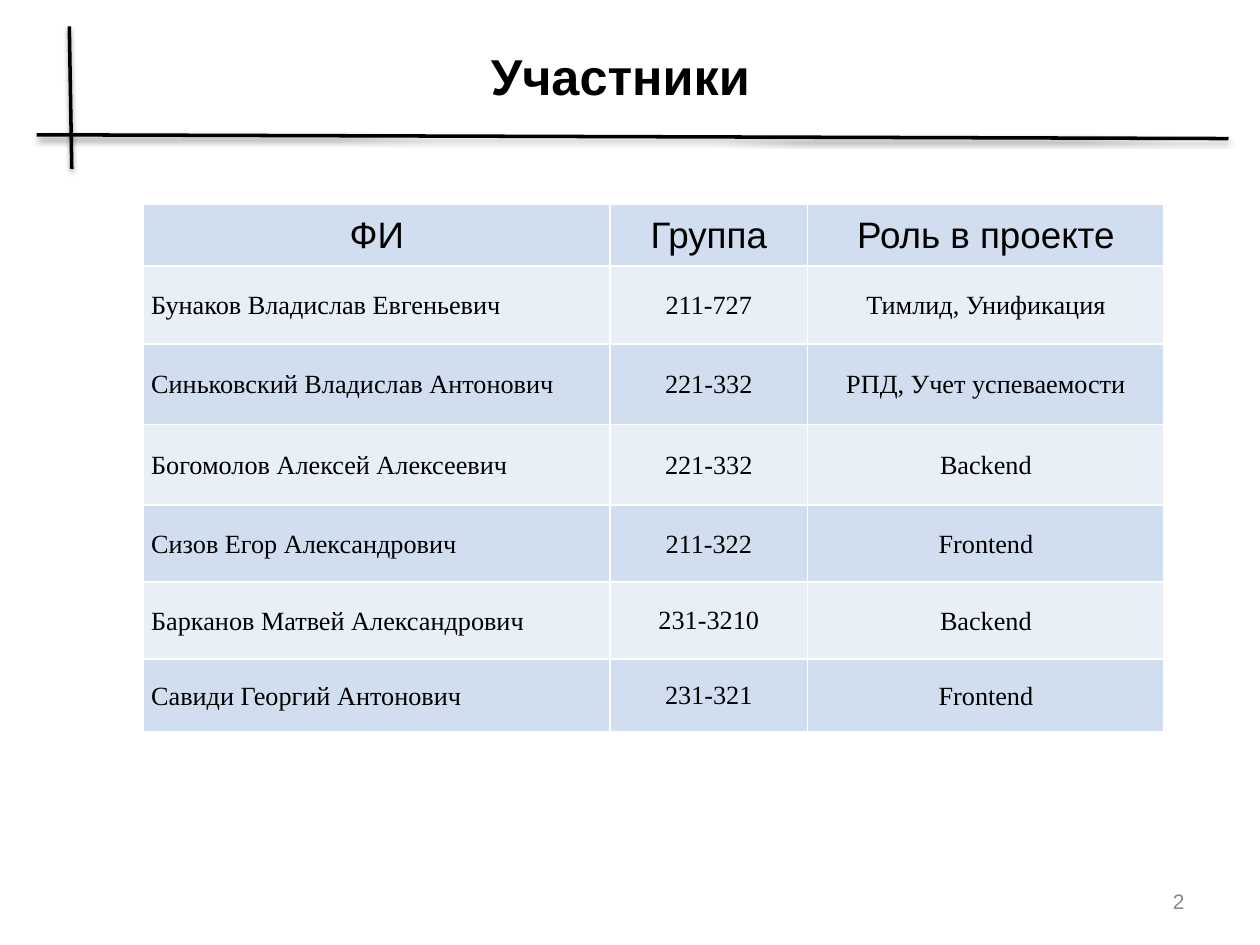
from dataclasses import dataclass

from lxml import etree
from pptx import Presentation
from pptx.dml.color import RGBColor
from pptx.enum.shapes import MSO_CONNECTOR
from pptx.enum.text import MSO_ANCHOR, PP_ALIGN
from pptx.oxml import parse_xml
from pptx.oxml.ns import nsdecls, qn
from pptx.util import Inches, Pt

LEFT, CENTER, RIGHT = PP_ALIGN.LEFT, PP_ALIGN.CENTER, PP_ALIGN.RIGHT
MIDDLE = MSO_ANCHOR.MIDDLE
STRAIGHT = MSO_CONNECTOR.STRAIGHT


@dataclass(frozen=True)
class Theme:
    ink: str = "000000"
    muted: str = "888888"
    border: str = "FFFFFF"
    bands: tuple = ("D0DEEF", "E9EFF7")
    heading_font: str = "Arial"
    body_font: str = "Times New Roman"
    title_size: float = 28.8
    header_size: float = 21
    body_size: float = 15
    number_size: float = 12
    rule_width: float = 2
    border_width: float = 1


THEME = Theme()

HEADER = ("ФИ", "Группа", "Роль в проекте")
MEMBERS = (
    ("Бунаков Владислав Евгеньевич", "211-727", "Тимлид, Унификация"),
    ("Синьковский Владислав Антонович", "221-332", "РПД, Учет успеваемости"),
    ("Богомолов Алексей Алексеевич", "221-332", "Backend"),
    ("Сизов Егор Александрович", "211-322", "Frontend"),
    ("Барканов Матвей Александрович", "231-3210", "Backend"),
    ("Савиди Георгий Антонович", "231-321", "Frontend"),
)
COLUMN_WIDTHS = (3.7, 1.57, 2.83)
ROW_HEIGHTS = (0.49, 0.62, 0.64, 0.64, 0.61, 0.61, 0.58)
TIGHT_ROWS = (5, 6)  # group numbers here have single line spacing


def write_text(frame, text, *, size, font=THEME.heading_font, color=THEME.ink,
               bold=False, align=LEFT, line_spacing=None):
    frame.word_wrap = True
    paragraph = frame.paragraphs[0]
    paragraph.alignment = align
    paragraph.line_spacing = line_spacing
    run = paragraph.add_run()
    run.text = text
    run.font.name = font
    run.font.size = Pt(size)
    run.font.bold = bold
    run.font.color.rgb = RGBColor.from_string(color)


def set_margins(target, left, top, right, bottom):
    target.margin_left, target.margin_top = Inches(left), Inches(top)
    target.margin_right, target.margin_bottom = Inches(right), Inches(bottom)


def add_label(slide, box, text, margins=(0.1, 0.05, 0.1, 0.05), **text_format):
    frame = slide.shapes.add_textbox(*map(Inches, box)).text_frame
    set_margins(frame, *margins)
    frame.vertical_anchor = MIDDLE
    write_text(frame, text, **text_format)


def add_crossed_rules(slide, box):
    left, top, width, height = box
    right, bottom = left + width, top + height
    rules = slide.shapes.add_group_shape()
    ends = (
        (left + 0.28, bottom, left + 0.26, top),
        (left, bottom - 0.27, right, bottom - 0.24),
    )
    for points in ends:
        rule = rules.shapes.add_connector(STRAIGHT, *map(Inches, points))
        rule.line.color.rgb = RGBColor.from_string(THEME.ink)
        rule.line.width = Pt(THEME.rule_width)
        # Soft shadow straight below the rule
        rule._element.spPr.append(parse_xml(
            f'<a:effectLst {nsdecls("a")}>'
            f'<a:outerShdw blurRad="{Pt(3.1)}" dist="{Pt(1.6)}" dir="5400000" '
            f'rotWithShape="0"><a:srgbClr val="{THEME.ink}">'
            '<a:alpha val="38000"/></a:srgbClr></a:outerShdw></a:effectLst>'))


def set_borders(cell):
    properties = cell._tc.get_or_add_tcPr()
    for position, side in enumerate(("lnL", "lnR", "lnT", "lnB")):
        line = etree.Element(qn(f"a:{side}"), w=str(Pt(THEME.border_width)))
        fill = etree.SubElement(line, qn("a:solidFill"))
        etree.SubElement(fill, qn("a:srgbClr"), val=THEME.border)
        properties.insert(position, line)


def add_member_table(slide, box):
    rows = (HEADER, *MEMBERS)
    table = slide.shapes.add_table(
        len(rows), len(HEADER), *map(Inches, box)).table
    for column, width in zip(table.columns, COLUMN_WIDTHS):
        column.width = Inches(width)
    for row, height in zip(table.rows, ROW_HEIGHTS):
        row.height = Inches(height)

    for r, values in enumerate(rows):
        is_header = r == 0
        for c, value in enumerate(values):
            tight = r in TIGHT_ROWS and c == 1
            cell = table.cell(r, c)
            cell.fill.solid()
            cell.fill.fore_color.rgb = RGBColor.from_string(THEME.bands[r % 2])
            cell.vertical_anchor = MIDDLE
            side, edge = (0.03, 0.02) if tight else (0.06, 0)
            set_margins(cell, side, edge, side, edge)
            set_borders(cell)
            write_text(
                cell.text_frame, value,
                size=THEME.header_size if is_header else THEME.body_size,
                font=THEME.heading_font if is_header else THEME.body_font,
                align=CENTER if is_header or c else LEFT,
                line_spacing=None if tight else 1.06)


def main():
    deck = Presentation()
    deck.slide_width, deck.slide_height = Inches(10), Inches(7.5)
    slide = deck.slides.add_slide(deck.slide_layouts[6])

    # Title, set slightly low and left of the box centre
    add_label(slide, (0.5, 0.21, 9, 0.68), "Участники",
              margins=(0.1, 0.15, 0.25, 0.05),
              size=THEME.title_size, bold=True, align=CENTER)
    # Slide number
    add_label(slide, (7.17, 6.95, 2.33, 0.4), "2",
              size=THEME.number_size, color=THEME.muted, align=RIGHT)
    # Rules under the title
    add_crossed_rules(slide, (0.29, 0.21, 9.46, 1.13))
    # Project members
    add_member_table(slide, (1.14, 1.62, 8.1, 4.19))

    deck.save("out.pptx")


if __name__ == "__main__":
    main()
